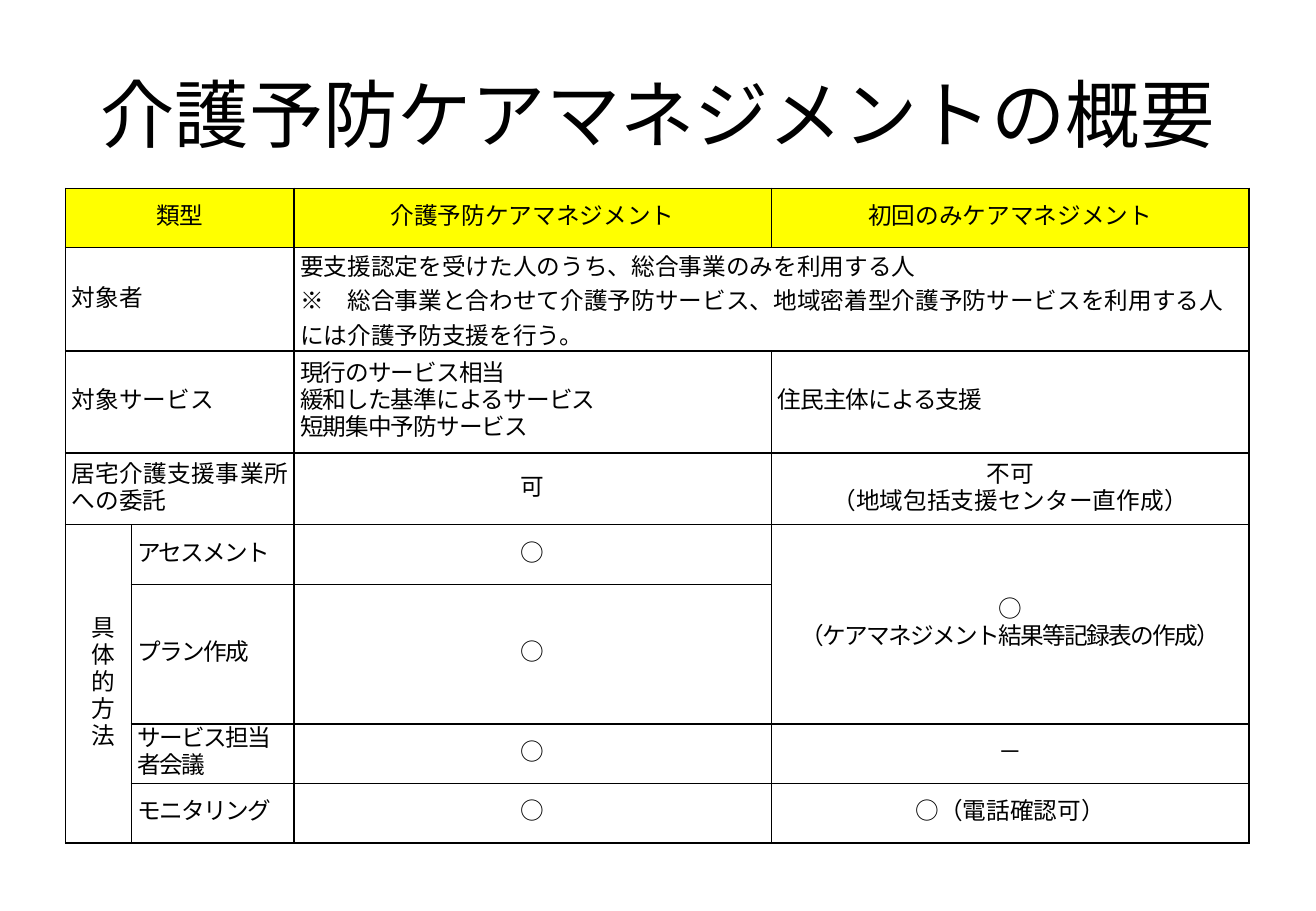
from dataclasses import dataclass
from typing import Any

from lxml.etree import SubElement
from pptx import Presentation
from pptx.dml.color import RGBColor
from pptx.enum.text import MSO_ANCHOR, PP_ALIGN
from pptx.oxml.ns import qn
from pptx.util import Emu, Pt

UNIT = 9144
HUES = {"ink": "000000", "head": "FFFF00", "page": "FFFFFF"}
FACE = "Noto Sans CJK JP"
LEFT, MID, JUST = PP_ALIGN.LEFT, PP_ALIGN.CENTER, PP_ALIGN.JUSTIFY
COLS = (54, 134, 393, 393)
ROWS = (49, 84, 84, 59, 49, 115, 49, 49)
STEP = {"line_spacing": Pt(16)}
ITEM = STEP | {"space_before": Pt(2.4), "space_after": Pt(1.2)}
BOX = {"vertical_anchor": MSO_ANCHOR.MIDDLE, "margin_left": Emu(5 * UNIT),
       "margin_right": Emu(5 * UNIT), "margin_top": 0, "margin_bottom": 0}
PLAIN = {"first_row": False, "horz_banding": False}


@dataclass(frozen=True)
class Entry:
    row: int
    col: int
    lines: tuple[str, ...]
    align: PP_ALIGN = MID
    span: tuple[int, int] = (1, 1)
    form: dict[str, Any] | None = None
    gaps: tuple[int, ...] = (0,)
    turn: bool = False


def px(num: int) -> Emu:
    return Emu(num * UNIT)


def hue(name: str) -> RGBColor:
    return RGBColor.from_string(HUES[name])


def apply(part: Any, form: dict[str, Any]) -> None:
    for key, val in form.items():
        setattr(part, key, val)


def write(para: Any, text: str, size: int, face: str, gap: int = 0) -> None:
    run = para.add_run()
    run.text = text
    apply(run.font, {"size": Pt(size), "name": face, "bold": False})
    run.font.color.rgb = hue("ink")
    props = run.font._element
    props.set("lang", "ja-JP")
    props.set("spc", str(gap))
    SubElement(props, qn("a:ea"), typeface=FACE)


def rule(cell: Any) -> None:
    props = cell._tc.get_or_add_tcPr()
    for side in ("lnL", "lnR", "lnT", "lnB"):
        line = SubElement(props, qn(f"a:{side}"), w=str(Pt(1)))
        fill = SubElement(line, qn("a:solidFill"))
        SubElement(fill, qn("a:srgbClr"), val=HUES["ink"])


def place(table: Any, entry: Entry) -> None:
    cell = table.cell(entry.row, entry.col)
    high, wide = entry.span
    if entry.span != (1, 1):
        cell.merge(table.cell(entry.row + high - 1, entry.col + wide - 1))
    frame = cell.text_frame
    for num, text in enumerate(entry.lines):
        para = frame.add_paragraph() if num else frame.paragraphs[0]
        para.alignment = entry.align
        apply(para, STEP if entry.form is None else entry.form)
        write(para, text, 14, FACE, entry.gaps[num % len(entry.gaps)])
        if entry.turn:
            para._p.get_or_add_pPr().set("marL", str(px(8)))
    if entry.turn:
        cell._tc.get_or_add_tcPr().set("vert", "eaVert")


HEADS = (
    Entry(0, 0, ("類型",), span=(1, 2)),
    Entry(0, 2, ("介護予防ケアマネジメント",)),
    Entry(0, 3, ("初回のみケアマネジメント",)),
)
SIDES = tuple(
    Entry(row, 0, (text,), JUST, (1, 2))
    for row, text in enumerate(
        ("対象者", "対象サービス", "居宅介護支援事業所への委託"), 1)
)
TASKS = tuple(
    Entry(row, 1, (text,), LEFT, form=ITEM, gaps=(-100,))
    for row, text in enumerate(
        ("アセスメント", "プラン作成", "サービス担当者会議", "モニタリング"), 4)
)
MARKS = tuple(Entry(row, 2, ("○",)) for row in range(4, 8))
BODY = (
    Entry(1, 2, (
        "要支援認定を受けた人のうち、総合事業のみを利用する人",
        "※　総合事業と合わせて介護予防サービス、地域密着型介護予防サービスを利用する人には介護予防支援を行う。",
    ), LEFT, (1, 2), form={}),
    Entry(2, 2, ("現行のサービス相当", "緩和した基準によるサービス",
                 "短期集中予防サービス"), LEFT, gaps=(-60,)),
    Entry(2, 3, ("住民主体による支援",), LEFT, gaps=(-60,)),
    Entry(3, 2, ("可",)),
    Entry(3, 3, ("不可", "（地域包括支援センター直作成）")),
    Entry(4, 0, ("具体的方法",), span=(4, 1), turn=True),
    Entry(4, 3, ("○", "（ケアマネジメント結果等記録表の作成）"),
          span=(2, 1), gaps=(0, -100)),
    Entry(6, 3, ("－",)),
    Entry(7, 3, ("○（電話確認可）",)),
)


def main() -> None:
    deck = Presentation()
    apply(deck, {"slide_width": px(1083), "slide_height": px(750)})
    slide = deck.slides.add_slide(deck.slide_layouts[5])
    title = slide.shapes.title
    apply(title, {"left": px(54), "top": px(30),
                  "width": px(975), "height": px(125)})
    apply(title.text_frame, {"vertical_anchor": MSO_ANCHOR.MIDDLE,
                             "word_wrap": True})
    para = title.text_frame.paragraphs[0]
    para.alignment = MID
    write(para, "介護予防ケアマネジメントの概要", 44, "Calibri")

    table = slide.shapes.add_table(
        len(ROWS), len(COLS), px(54), px(155),
        px(sum(COLS)), px(sum(ROWS))).table
    apply(table, PLAIN)
    for col, wide in zip(table.columns, COLS):
        col.width = px(wide)
    for num, (row, high) in enumerate(zip(table.rows, ROWS)):
        row.height = px(high)
        for cell in row.cells:
            apply(cell, BOX)
            rule(cell)
            cell.fill.solid()
            cell.fill.fore_color.rgb = hue("page" if num else "head")
    for entry in HEADS + SIDES + TASKS + MARKS + BODY:
        place(table, entry)
    deck.save("out.pptx")


if __name__ == "__main__":
    main()
